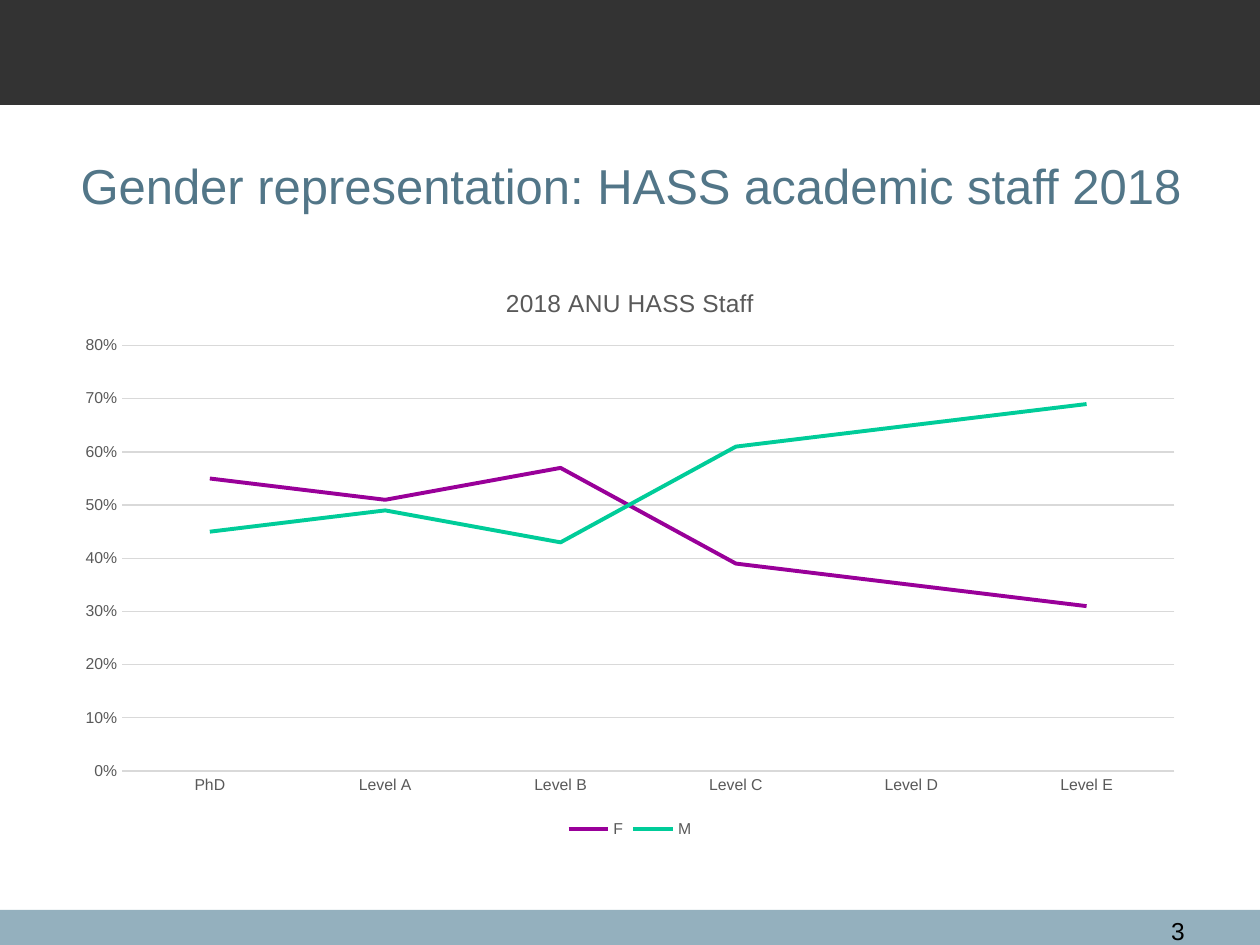
from dataclasses import dataclass

from pptx import Presentation
from pptx.chart.data import CategoryChartData
from pptx.dml.color import RGBColor
from pptx.enum.chart import XL_CHART_TYPE, XL_LEGEND_POSITION, XL_MARKER_STYLE, XL_TICK_MARK
from pptx.enum.shapes import MSO_SHAPE
from pptx.enum.text import MSO_ANCHOR, PP_ALIGN
from pptx.util import Pt


@dataclass(frozen=True)
class Theme:
    font: str = "Arial"
    header: str = "333333"
    footer: str = "94B0BE"
    heading: str = "527688"
    number: str = "000000"
    label: str = "595959"
    grid: str = "D9D9D9"
    female: str = "990099"
    male: str = "00CC99"
    heading_size: float = 28
    number_size: float = 14
    chart_title_size: float = 14
    label_size: float = 9
    grid_width: float = 0.75
    series_width: float = 2.25


def style_font(font, name, size, color):
    font.name = name
    font.size = Pt(size)
    font.bold = False
    font.color.rgb = RGBColor.from_string(color)


def write_text(frame, text, *, font, size, color, align, anchor=MSO_ANCHOR.TOP):
    frame.text = text
    frame.word_wrap = True
    frame.vertical_anchor = anchor
    paragraph = frame.paragraphs[0]
    paragraph.alignment = align
    style_font(paragraph.runs[0].font, font, size, color)


def style_line(line, color, width):
    line.color.rgb = RGBColor.from_string(color)
    line.width = Pt(width)


class SlideBuilder:
    """Draws themed elements on one slide, with lengths in points."""

    def __init__(self, slide, theme):
        self.slide = slide
        self.theme = theme

    def bar(self, left, top, width, height, color):
        band = self.slide.shapes.add_shape(
            MSO_SHAPE.RECTANGLE, Pt(left), Pt(top), Pt(width), Pt(height))
        band.shadow.inherit = False
        band.fill.solid()
        band.fill.fore_color.rgb = RGBColor.from_string(color)
        band.line.fill.background()

    def title(self, text, left, top, width, height):
        heading = self.slide.shapes.title
        heading.left, heading.top = Pt(left), Pt(top)
        heading.width, heading.height = Pt(width), Pt(height)
        write_text(heading.text_frame, text, font=self.theme.font,
                   size=self.theme.heading_size, color=self.theme.heading,
                   align=PP_ALIGN.CENTER, anchor=MSO_ANCHOR.MIDDLE)

    def page_number(self, text, left, top, width, height):
        number = self.slide.shapes.add_textbox(Pt(left), Pt(top), Pt(width), Pt(height))
        write_text(number.text_frame, text, font=self.theme.font,
                   size=self.theme.number_size, color=self.theme.number,
                   align=PP_ALIGN.RIGHT)

    def line_chart(self, title, levels, shares, colors, left, top, width, height):
        theme = self.theme
        data = CategoryChartData(number_format="0%")
        data.categories = levels
        for gender, values in shares.items():
            data.add_series(gender, values)
        chart = self.slide.shapes.add_chart(
            XL_CHART_TYPE.LINE, Pt(left), Pt(top), Pt(width), Pt(height), data).chart
        style_font(chart.font, theme.font, theme.label_size, theme.label)

        chart.has_title = True
        write_text(chart.chart_title.text_frame, title, font=theme.font,
                   size=theme.chart_title_size, color=theme.label, align=PP_ALIGN.CENTER)
        chart.chart_title.include_in_layout = False

        chart.has_legend = True
        chart.legend.position = XL_LEGEND_POSITION.BOTTOM
        chart.legend.include_in_layout = False
        style_font(chart.legend.font, theme.font, theme.label_size, theme.label)

        for axis in (chart.category_axis, chart.value_axis):
            axis.major_tick_mark = axis.minor_tick_mark = XL_TICK_MARK.NONE
            style_font(axis.tick_labels.font, theme.font, theme.label_size, theme.label)
        style_line(chart.category_axis.format.line, theme.grid, theme.grid_width)

        share_axis = chart.value_axis
        share_axis.minimum_scale, share_axis.maximum_scale = 0, 0.8
        share_axis.major_unit = 0.1
        share_axis.tick_labels.number_format = "0%"
        share_axis.tick_labels.number_format_is_linked = False
        share_axis.format.line.fill.background()
        share_axis.has_major_gridlines = True
        style_line(share_axis.major_gridlines.format.line, theme.grid, theme.grid_width)

        plot = chart.plots[0]
        plot.vary_by_categories = False
        for series, color in zip(plot.series, colors):
            series.smooth = False
            series.marker.style = XL_MARKER_STYLE.NONE
            style_line(series.format.line, color, theme.series_width)


def main():
    theme = Theme()
    presentation = Presentation()
    presentation.slide_width, presentation.slide_height = Pt(720), Pt(540)
    title_only = presentation.slide_layouts[5]
    builder = SlideBuilder(presentation.slides.add_slide(title_only), theme)

    builder.bar(0, 520, 720, 20, theme.footer)
    builder.bar(0, 0, 720, 60, theme.header)
    builder.page_number("3", 638, 520, 46, 17)
    builder.title("Gender representation: HASS academic staff 2018", 36.5, 60.5, 648, 90)
    builder.line_chart(
        "2018 ANU HASS Staff",
        ["PhD", "Level A", "Level B", "Level C", "Level D", "Level E"],
        {"F": [0.55, 0.51, 0.57, 0.39, 0.35, 0.31],
         "M": [0.45, 0.49, 0.43, 0.61, 0.65, 0.69]},
        [theme.female, theme.male], 36, 151, 648, 331)
    presentation.save("out.pptx")


if __name__ == "__main__":
    main()
